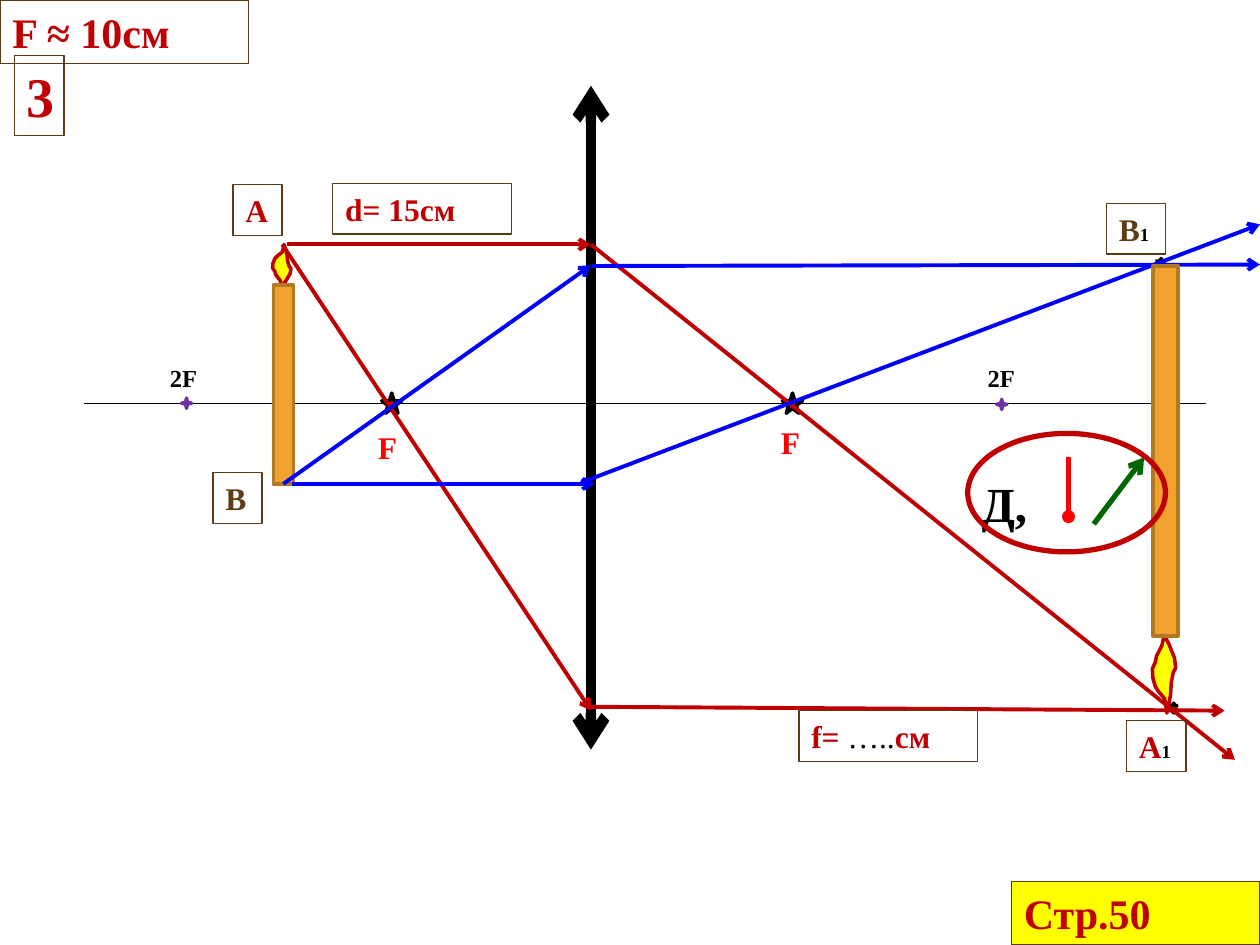
import pptx
import pptx.dml.color
import pptx.enum.dml
import pptx.enum.shapes
import pptx.enum.text
import pptx.oxml
import pptx.oxml.ns
import pptx.util

Pt = pptx.util.Pt
SHAPE = pptx.enum.shapes.MSO_SHAPE
FONT = "Times New Roman"
RED, BLUE, BLACK, BROWN, YELLOW = "C00000", "0000FF", "000000", "603A14", "FFFF00"
BRIGHT_RED, GREEN, PURPLE, WHITE = "FF0000", "006600", "7030A0", "FFFFFF"
WAX, WAX_EDGE = "F0A22E", "B27822"

LENS_X, AXIS_Y = 337.7, 230.4

# start, end, colour, width, arrowhead at start, arrowhead at end
AXES = [
    ((LENS_X, 49), (LENS_X, 428.4), BLACK, 6, "arrow", "arrow"),
    ((48.2, AXIS_Y), (689, AXIS_Y), BLACK, 0.79, None, None),
]
RED_RAYS = [
    ((164.2, 139.7), (LENS_X, 139.7)),
    ((LENS_X, 139.7), (705.6, 434.2)),
    ((161.3, 139.7), (LENS_X, 406)),
    ((LENS_X, 403.9), (699.8, 406.1)),
]
BLUE_RAYS = [
    ((161.3, 275.8), (LENS_X, 151.6)),
    ((167, 276.5), (339.8, 276.5)),
    ((332, 275.8), (720, 128.2)),
    ((LENS_X, 152), (720, 151.2)),
]
SYMBOLS = [
    ((610.6, 261.4), (610.6, 295.2), BRIGHT_RED, 2.5, None, "oval"),
    ((625, 299.5), (653.8, 261.4), GREEN, 3, None, "arrow"),
]

# preset, centre x, centre y, width, height, fill, line colour, line width, dashed
STARS = [
    (SHAPE.STAR_5_POINT, 223.9, AXIS_Y, 11.5, 11.5, RED, BLACK, 2, False),
    (SHAPE.STAR_5_POINT, 452.9, AXIS_Y, 11.5, 11.5, RED, BLACK, 2, False),
    (SHAPE.STAR_4_POINT, 106.6, AXIS_Y, 5.8, 5.8, RED, PURPLE, 2, False),
    (SHAPE.STAR_4_POINT, 572.4, 231.1, 5.8, 5.8, RED, PURPLE, 2, False),
    (SHAPE.STAR_6_POINT, 670.7, 404.6, 6.5, 5.8, BROWN, BLACK, 1.75, True),
    (SHAPE.STAR_6_POINT, 663.5, 150.5, 6.5, 5.8, BROWN, BLACK, 1.75, True),
]

# left, top, width, height, fill, framed, runs of (text, size, colour, bold)
LABELS = [
    (208.8, 241.2, 28, 29, None, False, [("F", 18, BRIGHT_RED, True)]),
    (439.2, 238.3, 28, 29, None, False, [("F", 18, BRIGHT_RED, True)]),
    (90, 203.8, 34, 24.2, None, False, [("2F", 14, BLACK, True)]),
    (557.3, 203.8, 34, 24.2, None, False, [("2F", 14, BLACK, True)]),
    (133.2, 105.5, 28, 29, None, True, [("А", 18, RED, True)]),
    (121.7, 270, 28, 29, None, True, [("В", 18, BROWN, True)]),
    (8.3, 31.6, 28.4, 46, None, True, [("3", 32, RED, True)]),
    (190.1, 104.8, 102.2, 29, None, True, [("d= 15cм", 18, RED, True)]),
    (0, 0, 142, 36.3, None, True, [("F ≈ 10cм", 24, RED, True)]),
    (456.5, 406, 102.2, 29, None, True,
     [("f= ", 18, RED, True), ("…..", 18, BLACK, False), ("cм", 18, RED, True)]),
    (643.7, 411.8, 34, 29, None, True, [("А", 18, RED, True), ("1", 10.5, BLACK, True)]),
    (632.2, 116.2, 34, 29, None, True, [("В", 18, BROWN, True), ("1", 10.5, BLACK, True)]),
    (553.7, 267.1, 50.4, 41, WHITE, False, [("Д,", 28, BLACK, True)]),
    (578, 503.7, 142, 36.3, YELLOW, True, [("Стр.50", 24, RED, True)]),
]

# Flame outline as fractions of its width and height, tip first, base at height 1
FLAME = [
    (0.63, 0), (0.74, 0.15), (0.79, 0.24), (0.82, 0.4), (0.9, 0.52), (1, 0.58),
    (0.95, 0.71), (0.84, 0.79), (0.74, 0.87), (0.53, 1), (0.42, 0.86), (0.2, 0.73),
    (0.15, 0.65), (0.03, 0.57), (0.05, 0.45), (0.15, 0.34), (0.3, 0.27), (0.53, 0.19),
    (0.58, 0.13),
]
# body box; flame left, tip y, width, signed height from tip to base
OBJECT_CANDLE = ((156.2, 162.7, 11.5, 113.8), (155.5, 139.7, 10.8, 23.8))
IMAGE_CANDLE = ((658.8, 151.9, 14.4, 211.7), (658.1, 407.5, 13.7, -44.6))


def color(value):
    return pptx.dml.color.RGBColor.from_string(value)


def paint(shape, fill, line, width):
    if fill:
        shape.fill.solid()
        shape.fill.fore_color.rgb = color(fill)
    else:
        shape.fill.background()
    if line:
        shape.line.color.rgb = color(line)
        shape.line.width = Pt(width)
    else:
        shape.line.fill.background()


def add_shape(shapes, preset, place, fill, line, width):
    shape = shapes.add_shape(preset, *map(Pt, place))
    shape.shadow.inherit = False
    paint(shape, fill, line, width)
    return shape


def add_line(page, start, end, line, width, head=None, tail=None):
    connector = page.shapes.add_connector(
        pptx.enum.shapes.MSO_CONNECTOR.STRAIGHT, *map(Pt, start + end))
    connector.line.color.rgb = color(line)
    connector.line.width = Pt(width)
    outline = connector.line._get_or_add_ln()
    for tag, kind in (("a:headEnd", head), ("a:tailEnd", tail)):
        if kind:
            outline.append(pptx.oxml.parse_xml(
                f'<{tag} {pptx.oxml.ns.nsdecls("a")} type="{kind}"/>'))
    connector._element.spPr.append(
        pptx.oxml.parse_xml(f'<a:effectLst {pptx.oxml.ns.nsdecls("a")}/>'))
    return connector


def add_star(page, preset, x, y, width, height, fill, line, weight, dashed):
    place = (x - width / 2, y - height / 2, width, height)
    star = add_shape(page.shapes, preset, place, fill, line, weight)
    if dashed:
        star.line.dash_style = pptx.enum.dml.MSO_LINE.DASH


def add_label(page, left, top, width, height, fill, framed, runs):
    box = page.shapes.add_textbox(*map(Pt, (left, top, width, height)))
    paint(box, fill, BROWN if framed else None, 0.75)
    box.text_frame.word_wrap = True
    box.text_frame.auto_size = pptx.enum.text.MSO_AUTO_SIZE.SHAPE_TO_FIT_TEXT
    para = box.text_frame.paragraphs[0]
    for text, size, ink, bold in runs:
        span = para.add_run()
        span.text = text
        span.font.name = FONT
        span.font.size = Pt(size)
        span.font.bold = bold
        span.font.color.rgb = color(ink)


def add_candle(page, body_place, flame_place):
    """Group a flame with its candle and return the candle's body."""
    shapes = page.shapes.add_group_shape().shapes
    left, tip, width, height = flame_place
    points = [(Pt(left + x * width), Pt(tip + y * height)) for x, y in FLAME]
    builder = shapes.build_freeform(*points[0])
    builder.add_line_segments(points[1:], close=True)
    flame = builder.convert_to_shape()
    flame.shadow.inherit = False
    paint(flame, YELLOW, RED, 2)
    return add_shape(shapes, SHAPE.RECTANGLE, body_place, WAX, WAX_EDGE, 2)


def main():
    deck = pptx.Presentation()
    deck.slide_width, deck.slide_height = Pt(720), Pt(540)
    page = deck.slides.add_slide(deck.slide_layouts[6])

    for axis in AXES:
        add_line(page, *axis)
    for star in STARS:
        add_star(page, *star)
    body = add_candle(page, *OBJECT_CANDLE)
    for start, end in RED_RAYS:
        add_line(page, start, end, RED, 2.25, tail="arrow")
    blue = [add_line(page, start, end, BLUE, 2.25, tail="arrow") for start, end in BLUE_RAYS]
    blue[0].begin_connect(body, 2)
    add_candle(page, *IMAGE_CANDLE)
    for label in LABELS:
        add_label(page, *label)
    for symbol in SYMBOLS:
        add_line(page, *symbol)
    add_shape(page.shapes, SHAPE.OVAL, (553, 247.7, 113, 67.7), None, RED, 3)

    deck.save("out.pptx")


if __name__ == "__main__":
    main()
